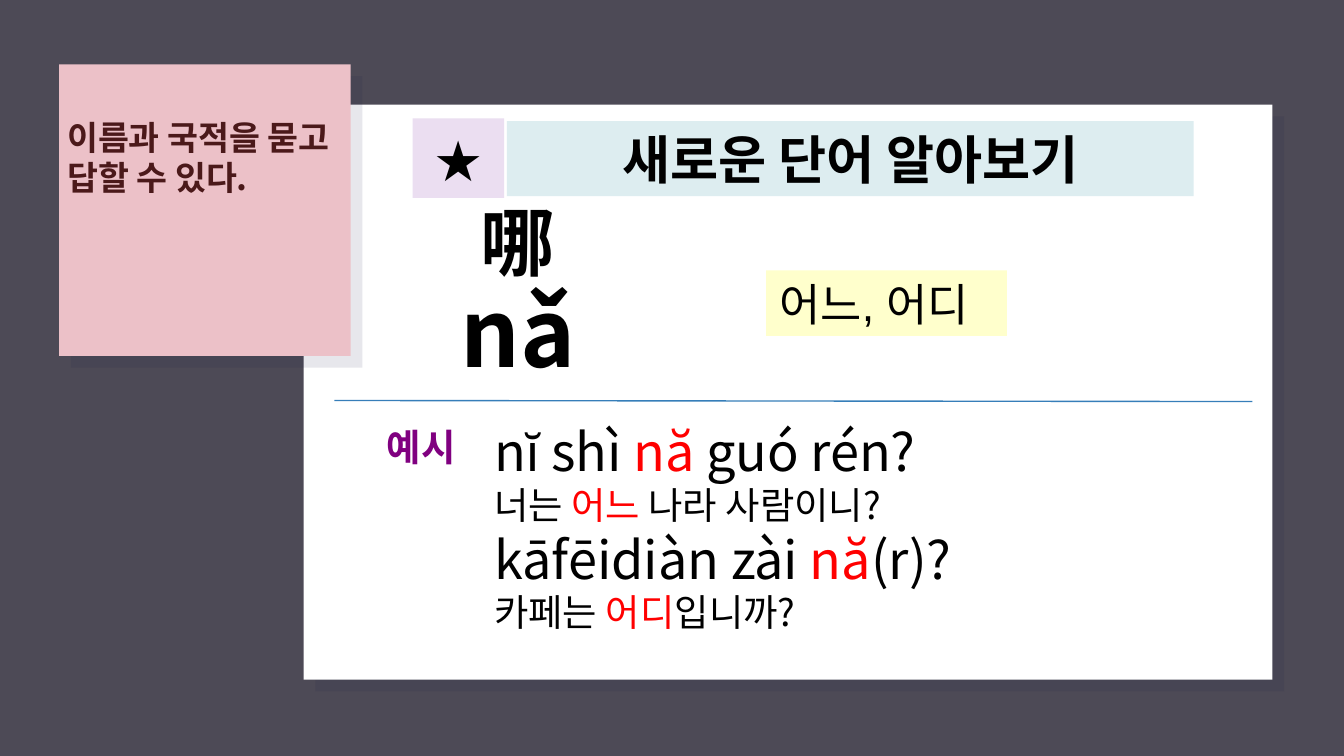
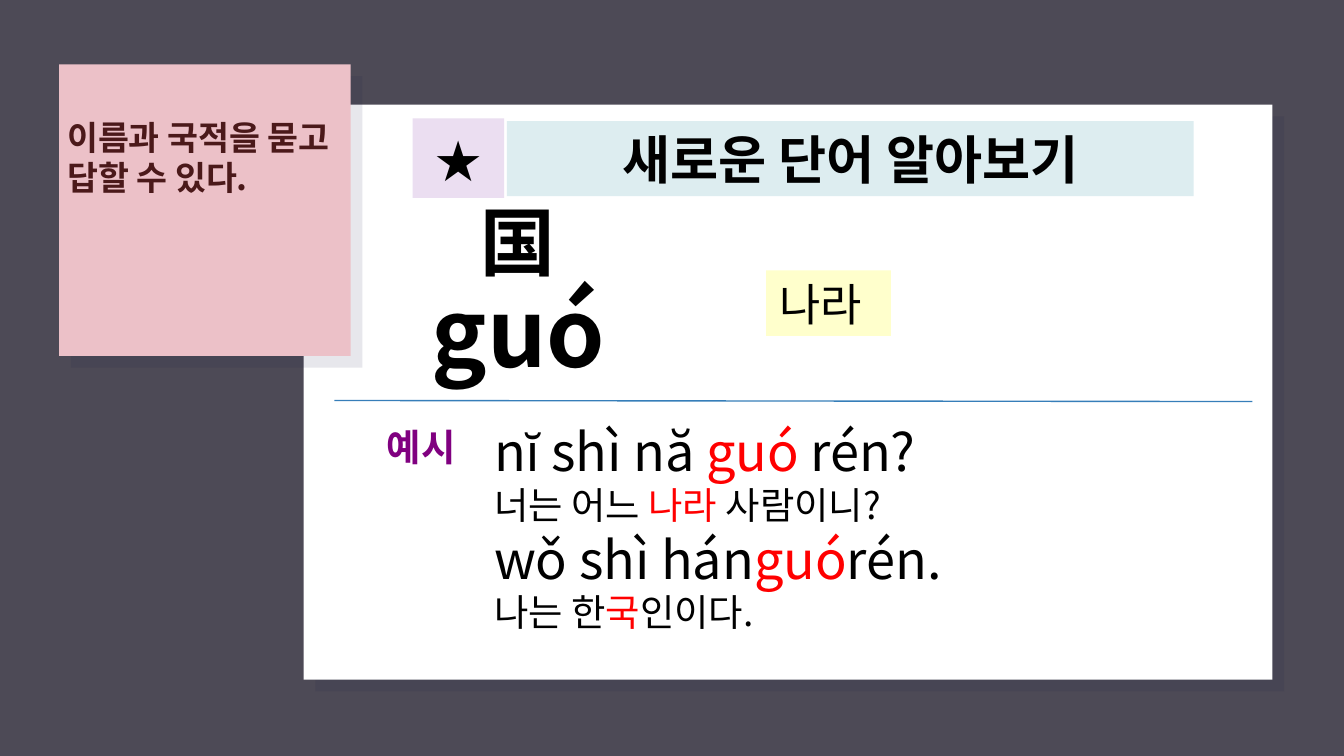
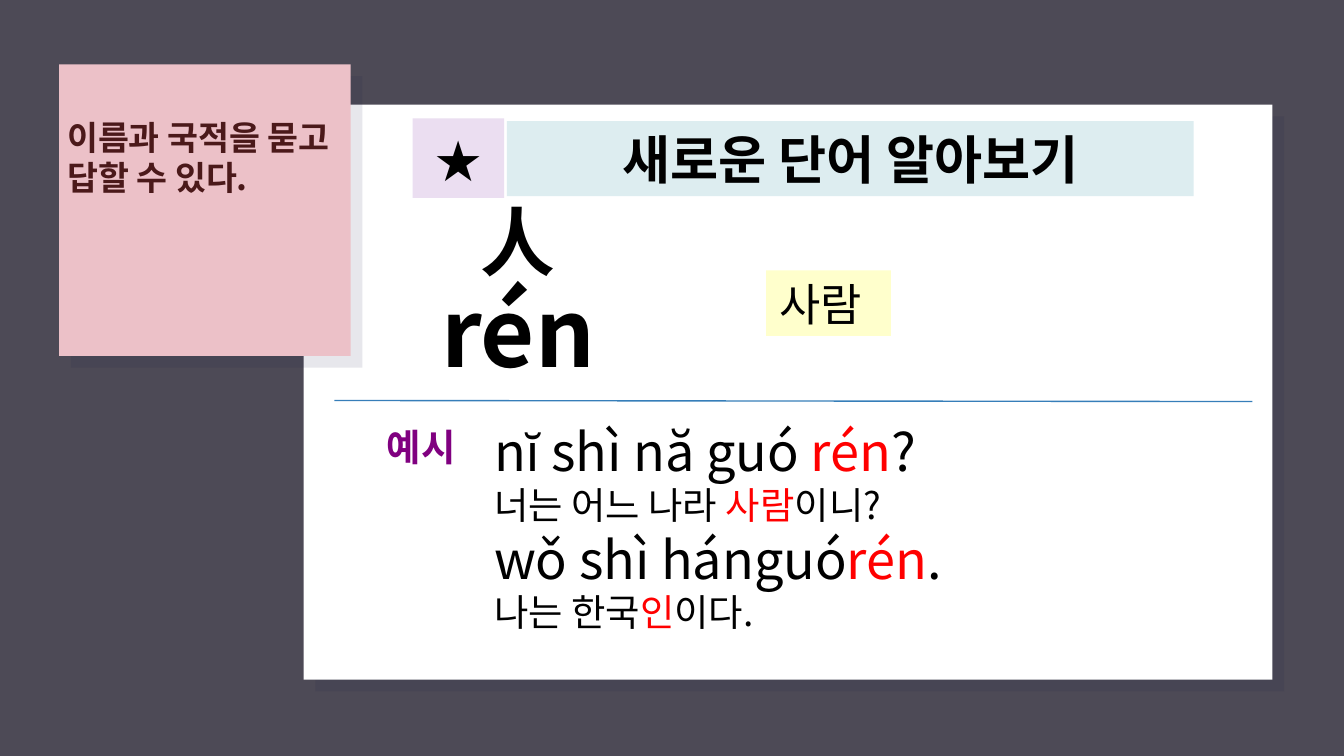
from lxml import etree
from pptx import Presentation
from pptx.dml.color import RGBColor
from pptx.enum.shapes import MSO_CONNECTOR, MSO_SHAPE
from pptx.enum.text import MSO_ANCHOR, PP_ALIGN
from pptx.oxml.ns import qn
from pptx.util import Cm, Pt

RECT = MSO_SHAPE.RECTANGLE
STRAIGHT = MSO_CONNECTOR.STRAIGHT
TOP = MSO_ANCHOR.TOP
LEFT, CENTER = PP_ALIGN.LEFT, PP_ALIGN.CENTER

COLORS = {
    "background": "4D4A56", "shadow": "1B1B46", "card": "FFFFFF",
    "note": "ECC1C8", "note_text": "4B191A", "star": "EBDEF1",
    "title": "DDEDF0", "meaning": "FFFFCC", "rule": "367EB9",
    "text": "000000", "label": "800080", "highlight": "FF0000",
}
SANS, CJK = "Arial", "Noto Sans CJK KR"
SHADOW_OFFSET = 0.22

# Each word: character, pinyin, meaning, width of the meaning box,
# then example lines as (before, highlighted, after)
WORDS = [
    ("哪", "nǎ", "어느, 어디", 4.55, [
        ("nĭ shì ", "nă", " guó rén?"),
        ("너는 ", "어느 ", "나라 사람이니?"),
        ("kāfēidiàn zài ", "nă", "(r)?"),
        ("카페는 ", "어디", "입니까?")]),
    ("国", "guó", "나라", 2.36, [
        ("nĭ shì nă ", "guó", " rén?"),
        ("너는 어느 ", "나라 ", "사람이니?"),
        ("wǒ shì hán", "guó", "rén."),
        ("나는 한", "국", "인이다.")]),
    ("人", "rén", "사람", 2.36, [
        ("nĭ shì nă guó ", "rén", "?"),
        ("너는 어느 나라 ", "사람", "이니?"),
        ("wǒ shì hánguó", "rén", "."),
        ("나는 한국", "인", "이다.")]),
]


def rgb(name):
    return RGBColor.from_string(COLORS[name])


class Deck:
    def __init__(self):
        self.prs = Presentation()
        self.prs.slide_width, self.prs.slide_height = Cm(25.4), Cm(14.29)
        self.s = None

    def new_slide(self):
        self.s = self.prs.slides.add_slide(self.prs.slide_layouts[6])
        fill = self.s.background.fill
        fill.solid()
        fill.fore_color.rgb = rgb("background")

    def rect(self, x, y, w, h, color, alpha=None):
        sp = self.s.shapes.add_shape(RECT, Cm(x), Cm(y), Cm(w), Cm(h))
        sp.shadow.inherit = False
        sp.line.fill.background()
        sp.fill.solid()
        sp.fill.fore_color.rgb = rgb(color)
        if alpha:
            clr = sp._element.spPr.find(".//" + qn("a:srgbClr"))
            etree.SubElement(clr, qn("a:alpha"), val=str(alpha * 1000))
        return sp

    def panel(self, x, y, w, h, color):
        """Rectangle with a soft offset shadow behind it."""
        self.rect(x + SHADOW_OFFSET, y + SHADOW_OFFSET, w, h, "shadow", 10)
        self.rect(x, y, w, h, color)

    def box(self, x, y, w, h):
        return self.s.shapes.add_textbox(Cm(x), Cm(y), Cm(w), Cm(h))

    def set_text(self, sp, lines, font=SANS, color="text", bold=False, align=LEFT):
        """Fill a shape with (size, runs) lines and return its text frame."""
        tf = sp.text_frame
        tf.word_wrap = True
        tf.vertical_anchor = TOP
        for i, (size, runs) in enumerate(lines):
            p = tf.add_paragraph() if i else tf.paragraphs[0]
            p.alignment = align
            for text in runs:
                p.add_run().text = text
            f = p.font
            f.name, f.size, f.bold = font, Pt(size), bold
            f.color.rgb = rgb(color)
            props = p._p.pPr.find(qn("a:defRPr"))
            etree.SubElement(props, qn("a:ea"), typeface=CJK)
        return tf

    def rule(self, x1, y1, x2, y2):
        line = self.s.shapes.add_connector(STRAIGHT, Cm(x1), Cm(y1), Cm(x2), Cm(y2))
        line.line.color.rgb = rgb("rule")
        line.line.width = Pt(0.75)
        etree.SubElement(line._element.spPr, qn("a:effectLst"))

    def header(self):
        self.panel(5.74, 1.98, 18.31, 10.87, "card")
        self.panel(1.12, 1.22, 5.51, 5.51, "note")
        self.set_text(self.rect(7.8, 2.24, 1.73, 1.5, "star"), [(30, ["★"])],
                      bold=True, align=CENTER)
        self.set_text(self.rect(9.58, 2.29, 12.98, 1.42, "title"),
                      [(28, ["새로운 단어 알아보기"])], CJK, bold=True, align=CENTER)

    def examples(self, lines):
        sizes = (28, 20) * 2
        tf = self.set_text(self.box(9.09, 7.8, 14.88, 4.32),
                           list(zip(sizes, lines)), CJK)
        for p in tf.paragraphs:
            p.runs[1].font.color.rgb = rgb("highlight")
        self.set_text(self.box(7.06, 7.9, 2.97, 1.09), [(20, ["예시"])],
                      color="label", bold=True)

    def word(self, character, pinyin, meaning, width):
        self.set_text(self.box(8.84, 3.58, 3.61, 1.93), [(40, [character])],
                      bold=True)
        self.set_text(self.box(6.25, 5.05, 7.09, 2.36), [(50, [pinyin])], CJK,
                      bold=True, align=CENTER)
        tf = self.set_text(self.rect(14.48, 5.11, width, 1.24, "meaning"),
                           [(24, [meaning])])
        tf.margin_right = 0

    def goal(self):
        tf = self.set_text(self.box(1.02, 1.96, 5.66, 4.5),
                           [(18, ["이름과 국적을 묻고 답할 수 있다", "."])],
                           color="note_text", bold=True)
        tf.margin_left = tf.margin_right = Cm(0.25)
        tf.margin_top = tf.margin_bottom = Cm(0.25)
        tf.paragraphs[0].runs[1].font.name = CJK


def main():
    deck = Deck()
    for character, pinyin, meaning, width, lines in WORDS:
        deck.new_slide()
        deck.header()
        deck.examples(lines)
        deck.rule(6.32, 7.57, 23.67, 7.59)
        deck.word(character, pinyin, meaning, width)
        deck.goal()
    deck.prs.save("out.pptx")


if __name__ == "__main__":
    main()
